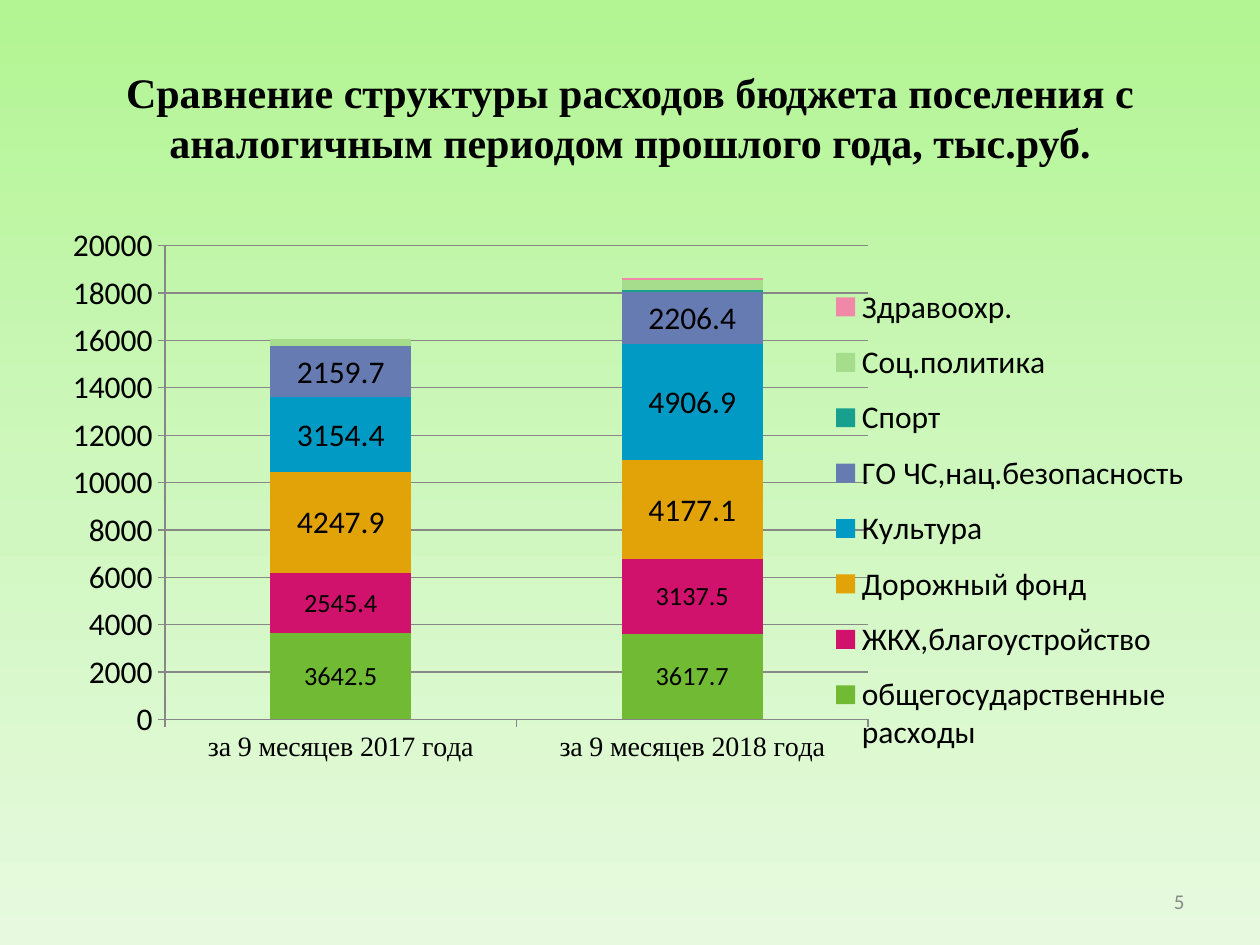
import copy

import lxml.etree
import pptx
import pptx.chart.data
import pptx.dml.color
import pptx.enum.chart
import pptx.enum.text
import pptx.oxml
import pptx.oxml.ns
import pptx.util

Cm = pptx.util.Cm
CATEGORIES = ["за 9 месяцев 2017 года", "за 9 месяцев 2018 года"]
EXPENSES = [
    ("общегосударственные расходы", (3642.5, 3617.7), "71BA34", 15),
    ("ЖКХ,благоустройство", (2545.4, 3137.5), "D1126C", 15),
    ("Дорожный фонд", (4247.9, 4177.1), "E2A308", 18),
    ("Культура", (3154.4, 4906.9), "009AC4", 18),
    ("ГО ЧС,нац.безопасность", (2159.7, 2206.4), "667BB2", 18),
    ("Спорт", (0, 100), "17A08E", None),
    ("Соц.политика", (300, 400), "A6DD8C", None),
    ("Здравоохр.", (None, 100), "F088A8", None),
]


def color(value):
    """Turn a hex string into a colour."""
    return pptx.dml.color.RGBColor.from_string(value)


def format_font(font, size, name="Calibri", fill="000000", bold=False):
    """Set the size, typeface, colour and weight of a font."""
    font.size = pptx.util.Pt(size)
    font.name = name
    font.bold = bold
    font.color.rgb = color(fill)


def write_text(shape, text, alignment, **font_format):
    """Write one formatted paragraph, vertically centred in a shape."""
    frame = shape.text_frame
    frame.word_wrap = True
    frame.vertical_anchor = pptx.enum.text.MSO_ANCHOR.MIDDLE
    paragraph = frame.paragraphs[0]
    paragraph.alignment = alignment
    run = paragraph.add_run()
    run.text = text
    format_font(run.font, **font_format)


def paint_background(slide, colors):
    """Fill the slide with an evenly stepped vertical gradient."""
    fill = slide.background.fill
    fill.gradient()
    fill.gradient_angle = 270
    stop_list = slide._element.xpath("./p:cSld/p:bg//a:gsLst")[0]
    for _ in colors[2:]:
        stop_list.insert(1, copy.deepcopy(stop_list[0]))
    for index, (stop, value) in enumerate(zip(fill.gradient_stops, colors)):
        stop.color.rgb = color(value)
        stop.position = index / (len(colors) - 1)


def place_title(slide, text, left, top, width, height):
    """Move the title placeholder into its box and fill it."""
    title = slide.shapes.title
    title.left, title.top, title.width, title.height = left, top, width, height
    write_text(title, text, pptx.enum.text.PP_ALIGN.CENTER,
               size=24, name="Times New Roman", bold=True)


def set_layout(element, position, x, y, width, height, inner=False):
    """Give a plot area or legend a manual layout in chart fractions."""
    for old in element.xpath("./c:layout"):
        element.remove(old)
    layout = pptx.oxml.parse_xml(f"<c:layout {pptx.oxml.ns.nsdecls('c')}><c:manualLayout/></c:layout>")
    settings = [("layoutTarget", "inner")] if inner else []
    settings += [("xMode", "edge"), ("yMode", "edge"),
                 ("x", x), ("y", y), ("w", width), ("h", height)]
    for tag, value in settings:
        child = lxml.etree.SubElement(layout[0], pptx.oxml.ns.qn(f"c:{tag}"))
        child.set("val", str(value))
    element.insert(position, layout)


def format_axis(axis, size, name):
    """Give an axis its font, grey line and outward ticks."""
    format_font(axis.tick_labels.font, size, name)
    axis.format.line.color.rgb = color("878787")
    axis.major_tick_mark = pptx.enum.chart.XL_TICK_MARK.OUTSIDE
    axis.minor_tick_mark = pptx.enum.chart.XL_TICK_MARK.NONE


def place_chart(slide, left, top, width, height):
    """Add the stacked column chart of expenses to its box."""
    data = pptx.chart.data.CategoryChartData()
    data.categories = CATEGORIES
    for name, values, _, _ in EXPENSES:
        data.add_series(name, values)
    chart = slide.shapes.add_chart(
        pptx.enum.chart.XL_CHART_TYPE.COLUMN_STACKED,
        left, top, width, height, data).chart
    chart.has_title = False
    format_font(chart.font, 18)

    format_axis(chart.category_axis, 16, "Times New Roman")
    value_axis = chart.value_axis
    format_axis(value_axis, 18, "Calibri")
    value_axis.minimum_scale, value_axis.maximum_scale = 0, 20000
    value_axis.major_unit = 2000
    value_axis.has_major_gridlines = True
    value_axis.major_gridlines.format.line.color.rgb = color("878787")

    plot = chart.plots[0]
    plot.gap_width, plot.overlap = 150, 100
    plot.vary_by_categories = False
    for series, (_, _, fill, label_size) in zip(plot.series, EXPENSES):
        series.format.fill.solid()
        series.format.fill.fore_color.rgb = color(fill)
        if label_size:
            labels = series.data_labels
            labels.show_value = True
            format_font(labels.font, label_size)

    chart.has_legend = True
    legend = chart.legend
    legend.position = pptx.enum.chart.XL_LEGEND_POSITION.RIGHT
    legend.include_in_layout = False
    format_font(legend.font, 18)
    set_layout(plot._element.getparent(), 0, 0.09, 0.04, 0.62, 0.76, inner=True)
    set_layout(legend._element, 1, 0.67, 0.08, 0.33, 0.8)


def place_page_number(slide, text, left, top, width, height):
    """Write the page number at the right of its box."""
    box = slide.shapes.add_textbox(left, top, width, height)
    write_text(box, text, pptx.enum.text.PP_ALIGN.RIGHT, size=12, fill="898989")


def main():
    """Build and save the budget slide."""
    presentation = pptx.Presentation()
    presentation.slide_width, presentation.slide_height = Cm(25.4), Cm(19.05)
    slide = presentation.slides.add_slide(presentation.slide_layouts[5])
    paint_background(slide, ["B2F592", "CEF7BD", "E7FADF"])
    margin, content_width = Cm(1.27), Cm(22.86)
    place_title(slide, "Сравнение структуры расходов бюджета поселения с "
                "аналогичным периодом прошлого года, тыс.руб.",
                margin, Cm(0.76), content_width, Cm(3.18))
    place_chart(slide, margin, Cm(4.45), content_width, Cm(12.57))
    place_page_number(slide, "5", Cm(18.21), Cm(17.65), Cm(5.92), Cm(1.02))
    presentation.save("out.pptx")


if __name__ == "__main__":
    main()
